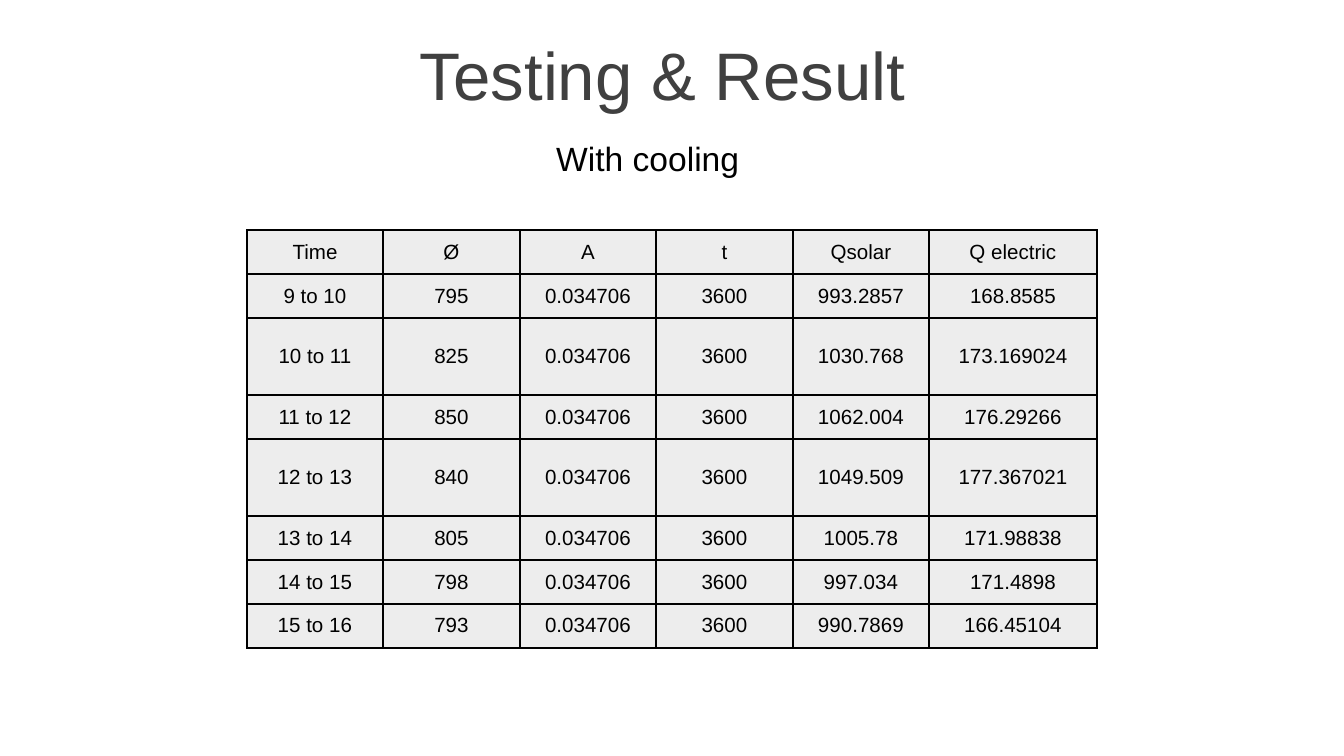
import pptx
import pptx.util
import pptx.dml.color
import pptx.enum.text
import pptx.oxml
import pptx.oxml.ns

# Content
TITLE = "Testing & Result "
SUBTITLE = "With cooling"
HEADERS = ["Time", "Ø", "A", "t", "Qsolar", "Q electric"]
AREA, SECONDS = "0.034706", "3600"
READINGS = [  # time, Ø, Qsolar, Q electric
    ("9 to 10", "795", "993.2857", "168.8585"),
    ("10 to 11", "825", "1030.768", "173.169024"),
    ("11 to 12", "850", "1062.004", "176.29266"),
    ("12 to 13", "840", "1049.509", "177.367021"),
    ("13 to 14", "805", "1005.78", "171.98838"),
    ("14 to 15", "798", "997.034", "171.4898"),
    ("15 to 16", "793", "990.7869", "166.45104"),
]
TALL_ROWS = {2, 4}

# Look and layout, in px
FONT = "Arial"
BLACK = pptx.dml.color.RGBColor(0x00, 0x00, 0x00)
TITLE_GRAY = pptx.dml.color.RGBColor(0x40, 0x40, 0x40)
CELL_GRAY = pptx.dml.color.RGBColor(0xED, 0xED, 0xED)
SLIDE_W, SLIDE_H = 1344, 756
TABLE_LEFT, TABLE_TOP = 247, 230
COLUMN_WIDTHS = [136, 137, 136, 137, 136, 168]
ROW_H, TALL_ROW_H = 44, 77
CENTER = pptx.enum.text.PP_ALIGN.CENTER
MIDDLE = pptx.enum.text.MSO_ANCHOR.MIDDLE


def px(length):
    return pptx.util.Emu(round(length * 914400 / 134.4))


def style(paragraph, size, color, align=None):
    paragraph.alignment = align
    paragraph.font.name = FONT
    paragraph.font.size = pptx.util.Pt(size)
    paragraph.font.color.rgb = color


def add_borders(cell):
    """Draw a 1 pt line on each side; lines precede the fill in tcPr."""
    properties = cell._tc.get_or_add_tcPr()
    for index, side in enumerate(("lnL", "lnR", "lnT", "lnB")):
        line = pptx.oxml.parse_xml(
            f'<a:{side} {pptx.oxml.ns.nsdecls("a")} w="12700"><a:solidFill>'
            f'<a:srgbClr val="{BLACK}"/></a:solidFill></a:{side}>')
        properties.insert(index, line)


prs = pptx.Presentation()
prs.slide_width, prs.slide_height = px(SLIDE_W), px(SLIDE_H)
slide = prs.slides.add_slide(prs.slide_layouts[5])

# Title
title = slide.shapes.title
title.left, title.top, title.width, title.height = px(0), px(31), px(SLIDE_W), px(85)
title.text_frame.text = TITLE
title.text_frame.vertical_anchor = MIDDLE
style(title.text_frame.paragraphs[0], 36, TITLE_GRAY, CENTER)

# Table of readings
rows = [HEADERS] + [[time, flux, AREA, SECONDS, solar, electric]
                    for time, flux, solar, electric in READINGS]
row_heights = [TALL_ROW_H if i in TALL_ROWS else ROW_H for i in range(len(rows))]
results = slide.shapes.add_table(
    len(rows), len(HEADERS), px(TABLE_LEFT), px(TABLE_TOP),
    px(sum(COLUMN_WIDTHS)), px(sum(row_heights))).table
for column, width in zip(results.columns, COLUMN_WIDTHS):
    column.width = px(width)
for row, height, values in zip(results.rows, row_heights, rows):
    row.height = px(height)
    for cell, value in zip(row.cells, values):
        cell.text = value
        cell.vertical_anchor = MIDDLE
        cell.margin_left = cell.margin_right = cell.margin_top = cell.margin_bottom = 0
        cell.fill.solid()
        cell.fill.fore_color.rgb = CELL_GRAY
        add_borders(cell)
        style(cell.text_frame.paragraphs[0], 11, BLACK, CENTER)
        cell.text_frame.paragraphs[0].font.bold = False

# Subtitle
subtitle = slide.shapes.add_textbox(px(543), px(131), px(212), px(54))
subtitle.text_frame.text = SUBTITLE
subtitle.text_frame.word_wrap = False
subtitle.text_frame.auto_size = pptx.enum.text.MSO_AUTO_SIZE.SHAPE_TO_FIT_TEXT
style(subtitle.text_frame.paragraphs[0], 18, BLACK)

prs.save("out.pptx")
